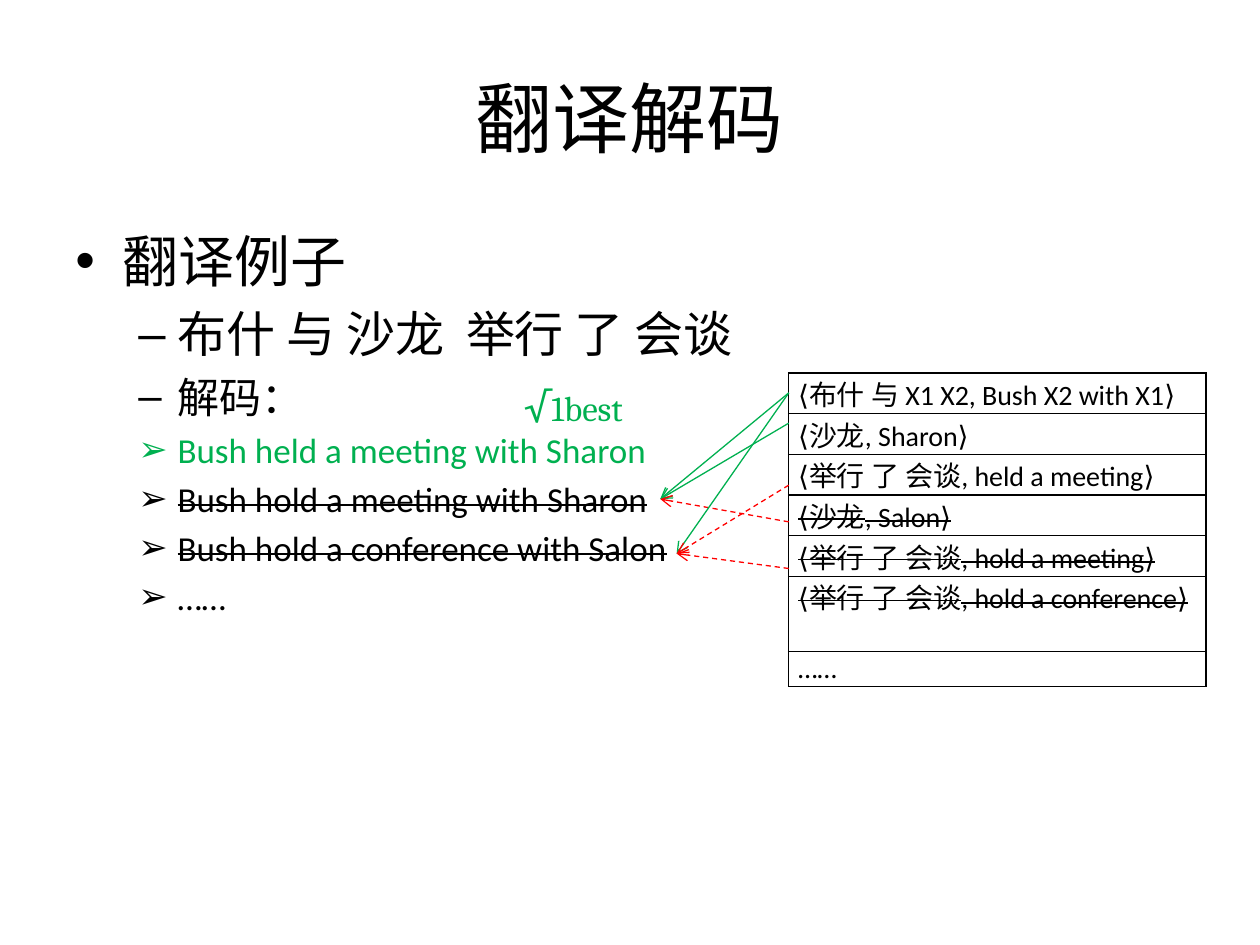
from lxml import etree
from pptx import Presentation
from pptx import util as u
from pptx.dml.color import RGBColor
from pptx.enum import dml, shapes, text
from pptx.oxml.ns import qn

BLACK, GREEN, RED = "000000", "00B050", "FF0000"


def color(value):
    return RGBColor.from_string(value)


class SlideBuilder:
    """Holds the shared style and the current slide."""
    font_name = "Calibri"
    line_width = u.Pt(0.75)

    def __init__(self, slide):
        self.slide = slide

    def style(self, paragraph, size, ink=BLACK, strike=False, name=None):
        font = paragraph.font
        font.name, font.size = name or self.font_name, u.Pt(size)
        font.color.rgb = color(ink)
        if strike:
            font._element.set("strike", "sngStrike")

    def text_box(self, left, top, width, height, wrap=True):
        shape = self.slide.shapes.add_textbox(
            u.Cm(left), u.Cm(top), u.Cm(width), u.Cm(height))
        shape.text_frame.word_wrap = wrap
        return shape.text_frame

    def title(self, words, *box):
        frame = self.text_box(*box)
        frame.vertical_anchor = text.MSO_ANCHOR.MIDDLE
        paragraph = frame.paragraphs[0]
        paragraph.text = words
        paragraph.alignment = text.PP_ALIGN.CENTER
        self.style(paragraph, 44)

    def bullets(self, items, *box):
        frame = self.text_box(*box)
        for index, (mark, words, size, ink, strike) in enumerate(items):
            paragraph = frame.add_paragraph() if index else frame.paragraphs[0]
            paragraph.text = words
            paragraph.space_before = u.Pt(size * 0.2)
            margin, hanging = (0.95, 0.95) if mark == "•" else (2.06, 0.79)
            properties = paragraph._p.get_or_add_pPr()
            properties.set("marL", str(u.Cm(margin)))
            properties.set("indent", str(-u.Cm(hanging)))
            etree.SubElement(properties, qn("a:buFont"), typeface="Arial")
            etree.SubElement(properties, qn("a:buChar"), char=mark)
            self.style(paragraph, size, ink, strike)

    def label(self, pieces, ink, *box):
        paragraph = self.text_box(*box, wrap=False).paragraphs[0]
        self.style(paragraph, pieces[0][1], ink, name="Cambria")
        for words, size in pieces:
            run = paragraph.add_run()
            run.text, run.font.size = words, u.Pt(size)

    def table(self, rows, left, top, width):
        total = sum(height for _, _, height in rows)
        table = self.slide.shapes.add_table(
            len(rows), 1, u.Cm(left), u.Cm(top), u.Cm(width), u.Cm(total)).table
        table.first_row = table.horz_banding = False
        for index, (words, strike, height) in enumerate(rows):
            table.rows[index].height = u.Cm(height)
            cell = table.cell(index, 0)
            cell.margin_left, cell.margin_right = u.Cm(0.19), u.Cm(0.26)
            cell.margin_top = cell.margin_bottom = 0
            cell.text = words
            self.style(cell.text_frame.paragraphs[0], 16, BLACK, strike)
            self.cell_borders(cell)
            cell.fill.background()

    def cell_borders(self, cell):
        properties = cell._tc.get_or_add_tcPr()
        for side in "LRTB":
            border = etree.SubElement(properties, qn(f"a:ln{side}"), w=str(u.Pt(1)))
            fill = etree.SubElement(border, qn("a:solidFill"))
            etree.SubElement(fill, qn("a:srgbClr"), val=BLACK)

    def arrow(self, start, end, ink, dashed=False):
        connector = self.slide.shapes.add_connector(
            shapes.MSO_CONNECTOR.STRAIGHT, *map(u.Cm, start + end))
        line = connector.line
        line.color.rgb, line.width = color(ink), self.line_width
        if dashed:
            line.dash_style = dml.MSO_LINE.DASH
        etree.SubElement(line._get_or_add_ln(), qn("a:tailEnd"), type="arrow")
        etree.SubElement(connector._element.spPr, qn("a:effectLst"))


def main():
    presentation = Presentation()
    presentation.slide_width, presentation.slide_height = u.Cm(25.4), u.Cm(19.05)
    builder = SlideBuilder(presentation.slides.add_slide(presentation.slide_layouts[6]))

    # Title and outline
    builder.title("翻译解码", 1.27, 0.76, 22.86, 3.18)
    builder.bullets([
        ("•", "翻译例子", 32, BLACK, False),
        ("–", "布什 与 沙龙  举行 了 会谈", 28, BLACK, False),
        ("–", "解码：", 24, BLACK, False),
        ("➢", "Bush held a meeting with Sharon", 20, GREEN, False),
        ("➢", "Bush hold a meeting with Sharon", 20, BLACK, True),
        ("➢", "Bush hold a conference with Salon", 20, BLACK, True),
        ("➢", "……", 20, BLACK, False),
    ], 1.27, 4.45, 22.86, 12.57)

    # Translation rules, rejected ones struck through
    table_left, table_top = 15.9, 7.52
    one_line, two_lines, last_line = 0.82, 1.51, 0.71
    builder.table([
        ("⟨布什 与 X1 X2, Bush X2 with X1⟩", False, one_line),
        ("⟨沙龙, Sharon⟩", False, one_line),
        ("⟨举行 了 会谈, held a meeting⟩", False, one_line),
        ("⟨沙龙, Salon⟩", True, one_line),
        ("⟨举行 了 会谈, hold a meeting⟩", True, one_line),
        ("⟨举行 了 会谈, hold a conference⟩", True, two_lines),
        ("……", False, last_line),
    ], table_left, table_top, 8.41)

    # Mark of the best candidate
    builder.label([("√", 24), ("1best", 20)], GREEN, 10.31, table_top, 2.79, 1.27)

    # Arrows from rules to the candidates that use them
    meeting, conference = (13.31, 10.06), (13.64, 11.16)
    for height, candidate, valid in [
        (7.92, meeting, True),
        (8.53, meeting, True),
        (10.52, meeting, False),
        (7.92, conference, True),
        (9.78, conference, False),
        (11.46, conference, False),
    ]:
        builder.arrow((table_left, height), candidate,
                      GREEN if valid else RED, dashed=not valid)

    presentation.save("out.pptx")


if __name__ == "__main__":
    main()
